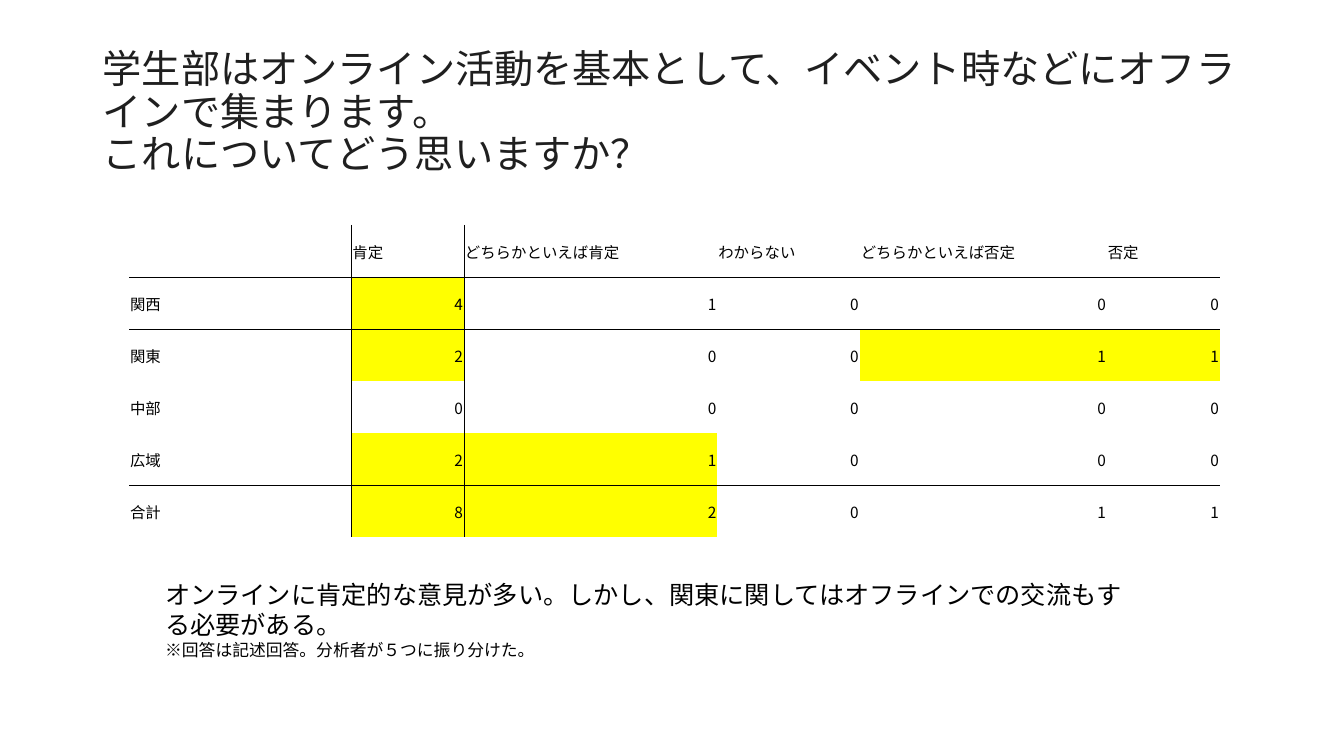
from lxml import etree
from pptx import Presentation
from pptx import util as u
from pptx.dml.color import RGBColor
from pptx.enum import text
from pptx.oxml import ns

WIDE, HIGH = u.Inches(13.33), u.Inches(7.5)
BLACK = RGBColor(0, 0, 0)
GREY = RGBColor(0x1F, 0x1F, 0x1F)
YELLOW = RGBColor(0xFF, 0xFF, 0)
NOTO = "Noto Sans CJK JP"
PLAIN = "{2D5ABB26-0587-4C30-8999-92F81FD0307C}"

TITLE = ("学生部はオンライン活動を基本として、イベント時などにオフラインで集まります。\v"
         "これについてどう思いますか？")
HEADS = ["", "肯定", "どちらかといえば肯定", "わからない", "どちらかといえば否定", "否定"]
VOTES = {
    "関西": [4, 1, 0, 0, 0],
    "関東": [2, 0, 0, 1, 1],
    "中部": [0, 0, 0, 0, 0],
    "広域": [2, 1, 0, 0, 0],
}
MARKS = {(1, 1), (2, 1), (2, 4), (2, 5), (4, 1), (4, 2), (5, 1), (5, 2)}
COLS = [16.55, 8.37, 18.86, 10.6, 18.38, 8.41]
NOTES = [
    ("オンラインに肯定的な意見が多い。しかし、関東に関してはオフラインでの交流もする必要がある。", 18),
    ("※回答は記述回答。分析者が５つに振り分けた。", 12),
]


def across(share):
    return round(WIDE * share / 100)


def down(share):
    return round(HIGH * share / 100)


def area(left, top, width, height):
    return across(left), down(top), across(width), down(height)


def style(para, size, color, name):
    font = para.font
    font.size = u.Pt(size)
    font.color.rgb = color
    font.name = name
    east = etree.SubElement(para._p.pPr.find(ns.qn("a:defRPr")), ns.qn("a:ea"))
    east.set("typeface", NOTO)


def rule(cell, side):
    line = etree.SubElement(cell._tc.get_or_add_tcPr(), ns.qn("a:ln" + side))
    line.set("w", str(u.Pt(0.5)))
    fill = etree.SubElement(line, ns.qn("a:solidFill"))
    etree.SubElement(fill, ns.qn("a:srgbClr")).set("val", str(BLACK))


def add_title(slide):
    title = slide.shapes.title
    title.left, title.top, title.width, title.height = area(6.9, 5.33, 86.25, 19.33)
    frame = title.text_frame
    frame.auto_size = text.MSO_AUTO_SIZE.NONE
    frame.vertical_anchor = text.MSO_ANCHOR.MIDDLE
    para = frame.paragraphs[0]
    para.text = TITLE
    para.alignment = text.PP_ALIGN.LEFT
    para.line_spacing = 0.9
    style(para, 28, GREY, "Lato")


def fill_cell(cell, value, mark, sides):
    cell.margin_left = cell.margin_right = cell.margin_top = u.Inches(0.01)
    cell.margin_bottom = 0
    cell.vertical_anchor = text.MSO_ANCHOR.MIDDLE
    para = cell.text_frame.paragraphs[0]
    para.text = str(value)
    if isinstance(value, int):
        para.alignment = text.PP_ALIGN.RIGHT
    style(para, 11, BLACK, NOTO)
    for side in sides:
        rule(cell, side)
    if mark:
        cell.fill.solid()
        cell.fill.fore_color.rgb = YELLOW
    else:
        cell.fill.background()


def add_votes(slide):
    totals = [sum(col) for col in zip(*VOTES.values())]
    rows = [HEADS, *([name, *nums] for name, nums in VOTES.items()), ["合計", *totals]]
    frame = slide.shapes.add_table(len(rows), len(COLS), *area(9.6, 29.73, sum(COLS), 41.33))
    table = frame.table
    table.first_row = table.horz_banding = False
    table._tbl.tblPr[0].text = PLAIN
    for col, share in zip(table.columns, COLS):
        col.width = across(share)
    last = len(rows) - 1
    for r, row in enumerate(rows):
        for c, value in enumerate(row):
            sides = {0: "R", 1: "L"}.get(c, "")
            sides += "T" if r in (1, last) else ""
            sides += "B" if r in (0, last - 1) else ""
            fill_cell(table.cell(r, c), value, (r, c) in MARKS, sides)


def add_notes(slide):
    frame = slide.shapes.add_textbox(*area(11.55, 76, 72.9, 12.53)).text_frame
    frame.word_wrap = True
    frame.auto_size = text.MSO_AUTO_SIZE.SHAPE_TO_FIT_TEXT
    for i, (words, size) in enumerate(NOTES):
        para = frame.add_paragraph() if i else frame.paragraphs[0]
        para.text = words
        style(para, size, BLACK, NOTO)


def main():
    deck = Presentation()
    deck.slide_width, deck.slide_height = WIDE, HIGH
    slide = deck.slides.add_slide(deck.slide_layouts[5])
    add_title(slide)
    add_votes(slide)
    add_notes(slide)
    deck.save("out.pptx")


if __name__ == "__main__":
    main()
